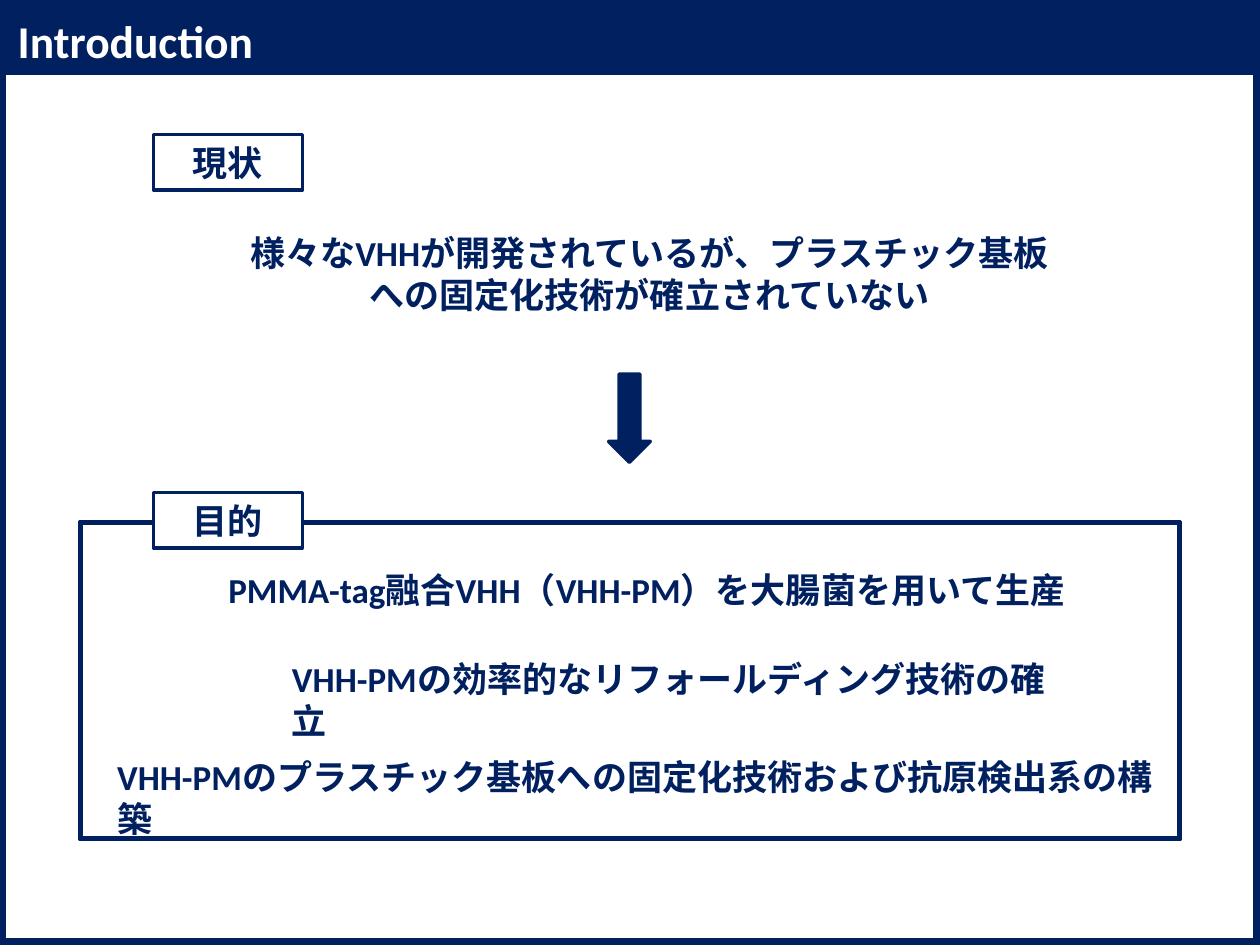
import pptx
import pptx.util
import pptx.dml.color
import pptx.enum.shapes
import pptx.enum.text

Pt = pptx.util.Pt
SHAPE = pptx.enum.shapes.MSO_SHAPE
ALIGN = pptx.enum.text.PP_ALIGN
ANCHOR = pptx.enum.text.MSO_ANCHOR
NAVY = pptx.dml.color.RGBColor(0x00, 0x20, 0x60)
WHITE = pptx.dml.color.RGBColor(0xFF, 0xFF, 0xFF)

TITLE = "Introduction"
STATEMENTS = [
    ("様々なVHHが開発されているが、プラスチック基板への固定化技術が確立されていない",
     (133.2, 128.9, 475.9, 55.4), ALIGN.CENTER),
    ("PMMA-tag融合VHH（VHH-PM）を大腸菌を用いて生産",
     (102.2, 321.1, 535, 31.7), ALIGN.CENTER),
    ("VHH-PMの効率的なリフォールディング技術の確立",
     (159.8, 372.2, 455.8, 31.7), ALIGN.LEFT),
    ("VHH-PMのプラスチック基板への固定化技術および抗原検出系の構築",
     (59.8, 428.4, 615.6, 31.7), ALIGN.LEFT),
]
FRAMES = [(0, 0, 720, 540), (45.4, 298.1, 629.3, 181.4)]
FRAME_THICKNESS = 0.005
ARROW = (347.8, 213.8, 23.8, 50.4)
LABELS = [("現状", 77), ("目的", 281.5)]
LABEL_LEFT, LABEL_WIDTH, LABEL_HEIGHT = 87.8, 85, 31.7


def write(box, text, size=20, color=NAVY, align=ALIGN.CENTER, anchor=ANCHOR.TOP):
    frame = box.text_frame
    frame.word_wrap = True
    frame.auto_size = pptx.enum.text.MSO_AUTO_SIZE.NONE
    frame.vertical_anchor = anchor
    para = frame.paragraphs[0]
    para.alignment = align
    span = para.add_run()
    span.text = text
    span.font.name = "Calibri"
    span.font.size = Pt(size)
    span.font.bold = True
    span.font.color.rgb = color


def paint(shape, fill, width=2):
    shape.fill.solid()
    shape.fill.fore_color.rgb = fill
    shape.line.color.rgb = NAVY
    shape.line.width = Pt(width)


def draw(page, kind, place, fill=NAVY):
    shape = page.shapes.add_shape(kind, *map(Pt, place))
    shape.shadow.inherit = False
    paint(shape, fill)
    return shape


def main():
    deck = pptx.Presentation()
    deck.slide_width, deck.slide_height = Pt(720), Pt(540)
    page = deck.slides.add_slide(deck.slide_layouts[5])

    title = page.shapes.title
    title.left, title.top, title.width, title.height = map(Pt, (2.9, 3.6, 717.1, 38.9))
    paint(title, NAVY, width=0.75)
    write(title, TITLE, size=26, color=WHITE, align=ALIGN.LEFT, anchor=ANCHOR.MIDDLE)

    for text, place, align in STATEMENTS:
        write(page.shapes.add_textbox(*map(Pt, place)), text, align=align)

    for place in FRAMES:
        draw(page, SHAPE.FRAME, place).adjustments[0] = FRAME_THICKNESS

    for text, top in LABELS:
        place = (LABEL_LEFT, top, LABEL_WIDTH, LABEL_HEIGHT)
        label = draw(page, SHAPE.RECTANGLE, place, fill=WHITE)
        write(label, text, anchor=ANCHOR.MIDDLE)

    draw(page, SHAPE.DOWN_ARROW, ARROW)
    deck.save("out.pptx")


if __name__ == "__main__":
    main()
